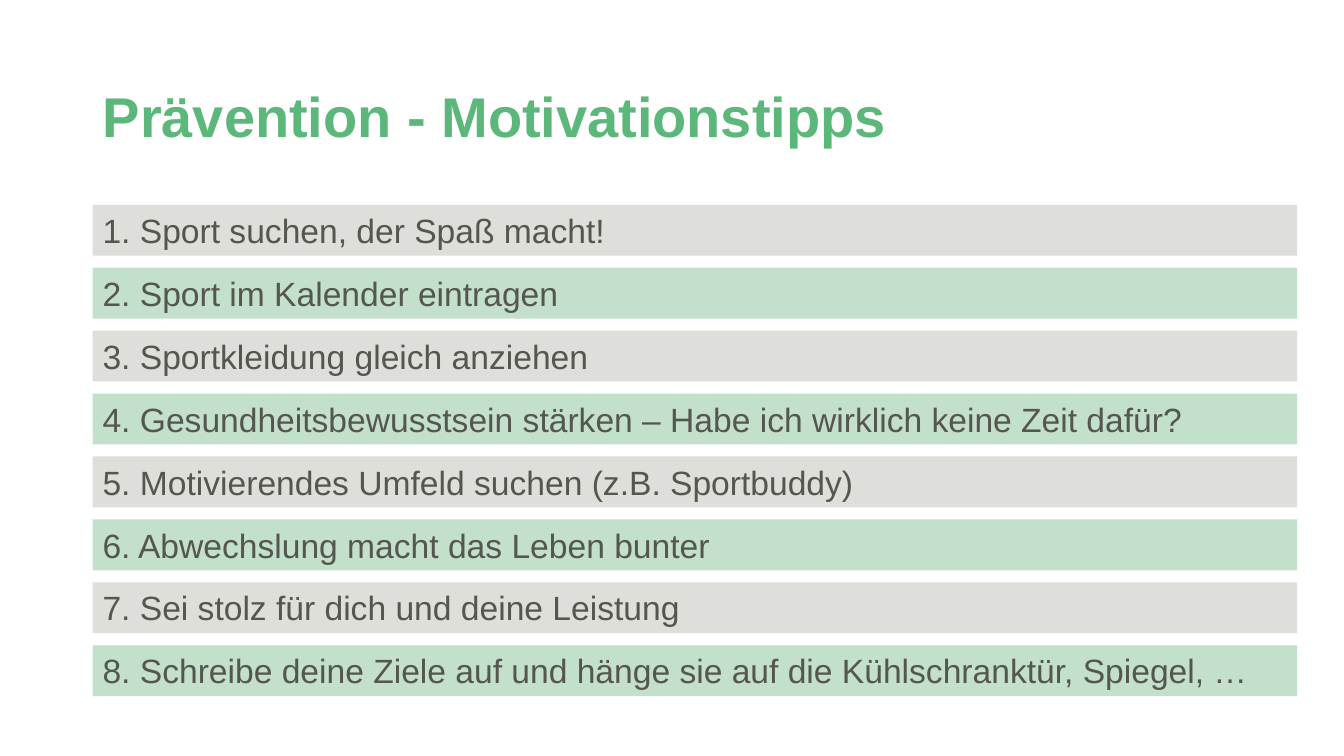
"""Build the slide with eight motivation tips for prevention."""
import pptx
import pptx.dml.color
import pptx.enum.shapes
import pptx.enum.text
import pptx.util

Pt = pptx.util.Pt
ANCHOR = pptx.enum.text.MSO_ANCHOR
TIPS = [
    "Sport suchen, der Spaß macht!",
    "Sport im Kalender eintragen",
    "Sportkleidung gleich anziehen",
    "Gesundheitsbewusstsein stärken – Habe ich wirklich keine Zeit dafür?",
    "Motivierendes Umfeld suchen (z.B. Sportbuddy)",
    "Abwechslung macht das Leben bunter",
    "Sei stolz für dich und deine Leistung",
    "Schreibe deine Ziele auf und hänge sie auf die Kühlschranktür, Spiegel, …",
]


def color(code):
    return pptx.dml.color.RGBColor.from_string(code)


def write(shape, text, size=24, ink="565650", bold=False, anchor=ANCHOR.TOP,
          fit=pptx.enum.text.MSO_AUTO_SIZE.NONE, lead=1.0):
    frame = shape.text_frame
    frame.text = text
    frame.word_wrap = True
    frame.auto_size = fit
    frame.vertical_anchor = anchor
    line = frame.paragraphs[0]
    line.alignment = pptx.enum.text.PP_ALIGN.LEFT
    line.line_spacing = lead
    font = line.runs[0].font
    font.name = "Arial"
    font.size = Pt(size)
    font.bold = bold
    font.color.rgb = color(ink)


class Page:
    left = 66.2
    green = "5CB77A"
    fills = ("DEDEDB", "C2E0CA")

    def __init__(self, deck):
        self.slide = deck.slides.add_slide(deck.slide_layouts[5])

    def title(self, text):
        shape = self.slide.shapes.title
        shape.left, shape.top = Pt(self.left), Pt(55.4)
        shape.width, shape.height = Pt(828), Pt(55.4)
        write(shape, text, size=40, ink=self.green, bold=True,
              anchor=ANCHOR.BOTTOM, lead=0.9)

    def bar(self, text, top, fill):
        kind = pptx.enum.shapes.MSO_SHAPE.RECTANGLE
        shape = self.slide.shapes.add_shape(
            kind, Pt(self.left), Pt(top), Pt(860.4), Pt(36.35))
        shape.shadow.inherit = False
        shape.fill.solid()
        shape.fill.fore_color.rgb = color(fill)
        shape.line.fill.background()
        write(shape, text, fit=pptx.enum.text.MSO_AUTO_SIZE.SHAPE_TO_FIT_TEXT)

    def bars(self, tips, top=146.3, step=44.95):
        for row, tip in enumerate(tips):
            fill = self.fills[row % len(self.fills)]
            self.bar(f"{row + 1}. {tip}", top + row * step, fill)


def main():
    deck = pptx.Presentation()
    deck.slide_width, deck.slide_height = Pt(960), Pt(540)
    page = Page(deck)
    page.title("Prävention - Motivationstipps")
    page.bars(TIPS)
    deck.save("out.pptx")


if __name__ == "__main__":
    main()
